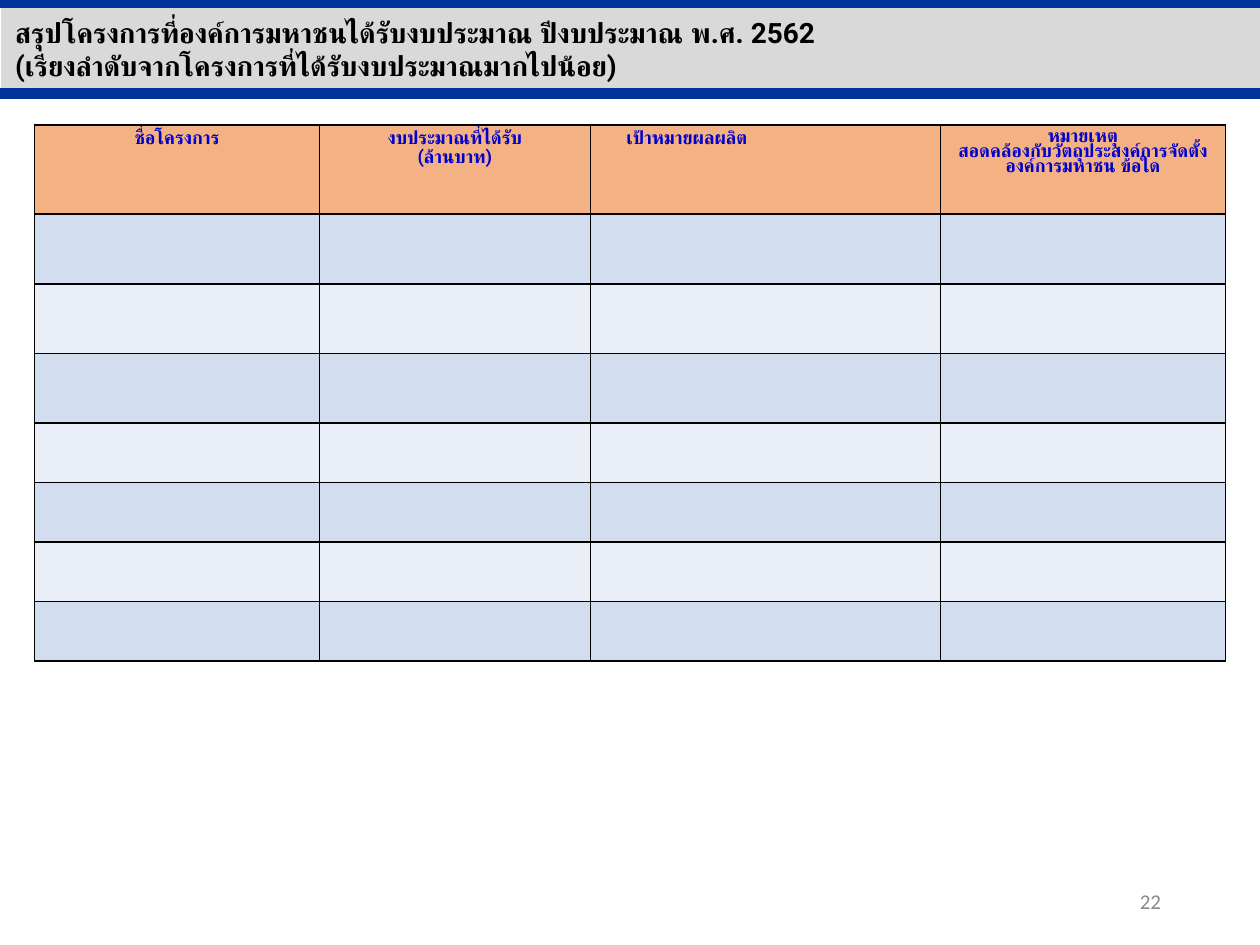
from typing import NamedTuple

from lxml.etree import SubElement
from pptx import Presentation
from pptx.dml.color import RGBColor
from pptx.enum.shapes import MSO_CONNECTOR, MSO_SHAPE
from pptx.enum.text import MSO_ANCHOR, MSO_AUTO_SIZE, PP_ALIGN
from pptx.oxml.ns import qn
from pptx.util import Pt

BLACK = RGBColor(0x00, 0x00, 0x00)
NAVY = RGBColor(0x00, 0x33, 0x99)
BAND_GREY = RGBColor(0xD9, 0xD9, 0xD9)
NUMBER_GREY = RGBColor(0x89, 0x89, 0x89)
HEADER_BLUE = RGBColor(0x00, 0x00, 0xCC)
HEADER_FILL = RGBColor(0xF4, 0xB1, 0x83)
ROW_FILLS = (RGBColor(0xD2, 0xDE, 0xEF), RGBColor(0xEA, 0xEF, 0xF7))

SLIDE_W, SLIDE_H = 720, 540
ROW_HEIGHTS = [51] + [39.8] * 3 + [34] * 4
TITLE = [
    "สรุปโครงการที่องค์การมหาชนได้รับงบประมาณ ปีงบประมาณ พ.ศ. 2562",
    "(เรียงลำดับจากโครงการที่ได้รับงบประมาณมากไปน้อย)",
]


class Column(NamedTuple):
    width: float
    heading: list[str]
    line_spacing: float = 0.9
    margin_right: float = 7.2


COLUMNS = [
    Column(162.7, ["ชื่อโครงการ"]),
    Column(154.8, ["งบประมาณที่ได้รับ", "(ล้านบาท)"]),
    Column(200.2, ["เป้าหมายผลผลิต"], margin_right=97),
    Column(162.7, ["หมายเหตุ", "สอดคล้องกับวัตถุประสงค์การจัดตั้งองค์การมหาชน ข้อใด"], 0.8),
]


def write(tf, lines: list[str], size: float, color: RGBColor, align: PP_ALIGN,
          font: str = "Roboto", bold: bool = True, spacing: float = 1.0) -> None:
    tf.word_wrap = True
    tf.text = "\n".join(lines)
    for p in tf.paragraphs:
        p.alignment, p.line_spacing = align, spacing
        p.space_before = Pt(0)
        f = p.font
        f.name, f.size, f.bold = font, Pt(size), bold
        f.color.rgb = color


def add_rule(s, y: float) -> None:
    line = s.shapes.add_connector(MSO_CONNECTOR.STRAIGHT, Pt(0), Pt(y), Pt(SLIDE_W), Pt(y))
    line.line.color.rgb, line.line.width = NAVY, Pt(6)
    SubElement(line.element.spPr, qn("a:effectLst"))


def format_cell(cell, fill: RGBColor) -> None:
    """Give the cell black 1 pt borders and a solid fill."""
    tc_pr = cell._tc.get_or_add_tcPr()
    for side in ("lnL", "lnR", "lnT", "lnB"):
        ln = SubElement(tc_pr, qn(f"a:{side}"), w=str(Pt(1)))
        SubElement(SubElement(ln, qn("a:solidFill")), qn("a:srgbClr"), val=str(BLACK))
    cell.fill.solid()
    cell.fill.fore_color.rgb = fill


def add_header(s) -> None:
    band = s.shapes.add_shape(MSO_SHAPE.RECTANGLE, Pt(0.7), Pt(3.6), Pt(719.3), Pt(49))
    band.shadow.inherit = False
    band.fill.solid()
    band.fill.fore_color.rgb = BAND_GREY
    band.line.fill.background()
    for y in (53.6, 1.4):
        add_rule(s, y)

    title = s.shapes.title
    title.left, title.top, title.width, title.height = Pt(1.4), Pt(5), Pt(644.4), Pt(46)
    tf = title.text_frame
    tf.auto_size = MSO_AUTO_SIZE.NONE
    tf.vertical_anchor = MSO_ANCHOR.MIDDLE
    write(tf, TITLE, 16, BLACK, PP_ALIGN.LEFT)
    title.element.getparent().append(title.element)  # in front of the band


def add_project_table(s) -> None:
    width = sum(c.width for c in COLUMNS)
    table = s.shapes.add_table(len(ROW_HEIGHTS), len(COLUMNS), Pt(19.8), Pt(71.4),
                               Pt(width), Pt(sum(ROW_HEIGHTS))).table
    for row, height in zip(table.rows, ROW_HEIGHTS):
        row.height = Pt(height)
    for i, column in enumerate(COLUMNS):
        table.columns[i].width = Pt(column.width)
        for j in range(len(ROW_HEIGHTS)):
            format_cell(table.cell(j, i), ROW_FILLS[(j - 1) % 2] if j else HEADER_FILL)
        heading = table.cell(0, i)
        heading.margin_right = Pt(column.margin_right)
        write(heading.text_frame, column.heading, 10.5, HEADER_BLUE, PP_ALIGN.CENTER,
              spacing=column.line_spacing)


def add_page_number(s) -> None:
    tf = s.shapes.add_textbox(Pt(508.5), Pt(500.5), Pt(162), Pt(28.8)).text_frame
    tf.vertical_anchor = MSO_ANCHOR.MIDDLE
    write(tf, ["22"], 12, NUMBER_GREY, PP_ALIGN.RIGHT, font="Calibri", bold=False)


def main() -> None:
    prs = Presentation()
    prs.slide_width, prs.slide_height = Pt(SLIDE_W), Pt(SLIDE_H)
    s = prs.slides.add_slide(prs.slide_layouts[5])
    add_header(s)
    add_page_number(s)
    add_project_table(s)
    prs.save("out.pptx")


if __name__ == "__main__":
    main()
